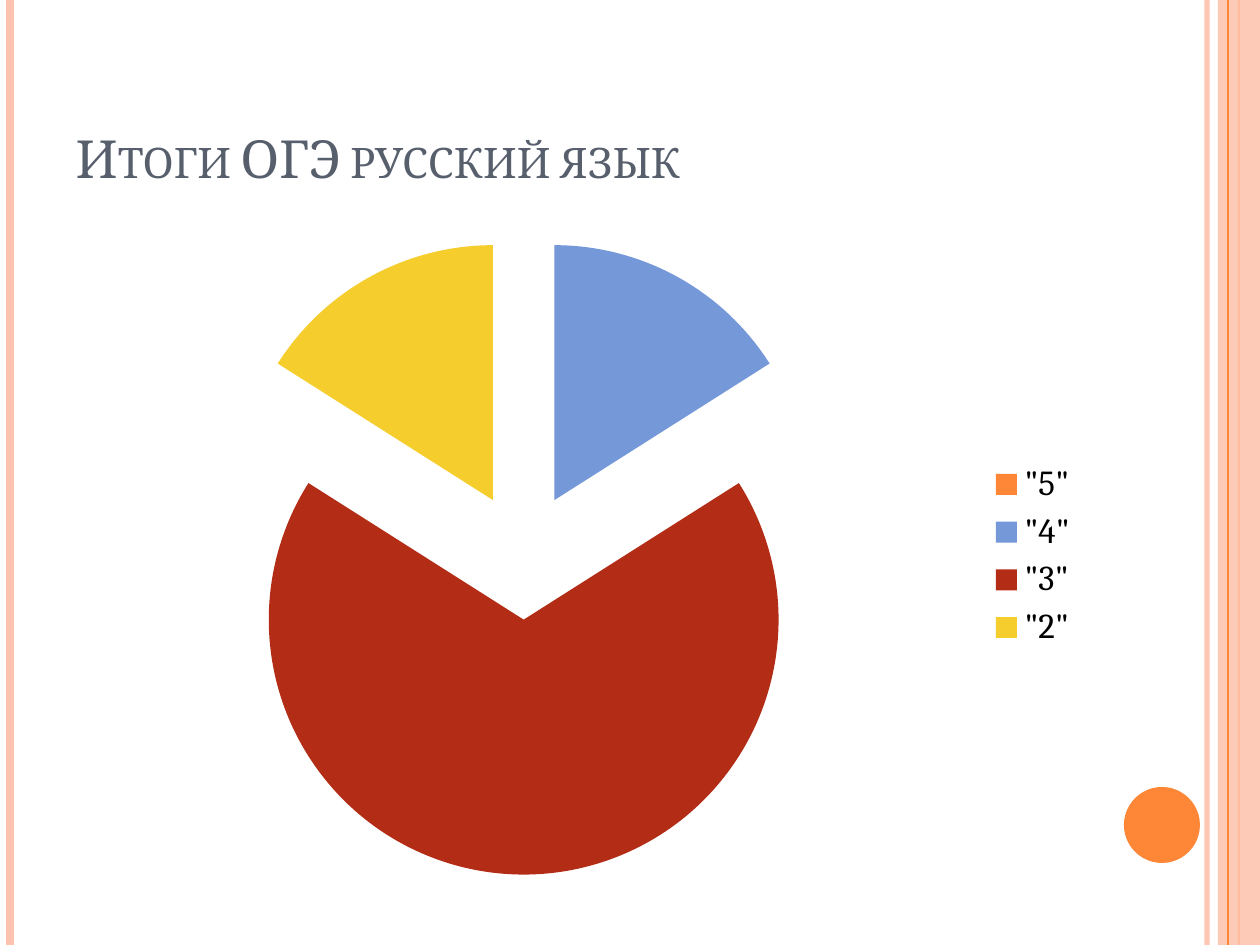
from dataclasses import dataclass

from lxml import etree
from pptx import Presentation
from pptx.chart.data import CategoryChartData
from pptx.dml.color import RGBColor
from pptx.enum.chart import XL_CHART_TYPE, XL_LEGEND_POSITION
from pptx.enum.shapes import MSO_CONNECTOR, MSO_SHAPE
from pptx.enum.text import MSO_ANCHOR, MSO_AUTO_SIZE, PP_ALIGN
from pptx.oxml.ns import qn
from pptx.util import Emu, Pt

PIE = XL_CHART_TYPE.PIE
LEGEND_RIGHT = XL_LEGEND_POSITION.RIGHT
STRAIGHT = MSO_CONNECTOR.STRAIGHT
RECTANGLE = MSO_SHAPE.RECTANGLE
OVAL = MSO_SHAPE.OVAL
BOTTOM = MSO_ANCHOR.BOTTOM
NO_FIT = MSO_AUTO_SIZE.NONE
LEFT = PP_ALIGN.LEFT

EMU_PER_PX = 914400 / 126
WIDTH, HEIGHT = 1260, 945
TITLE_ONLY = 5


@dataclass(frozen=True)
class Theme:
    font: str = "Cambria"
    title_size: int = 30
    legend_size: int = 20
    ink: str = "000000"
    title: str = "575F6D"
    peach: str = "FEC3AE"
    orange: str = "FE8637"
    blue: str = "7598D9"
    red: str = "B32C16"
    yellow: str = "F5CD2D"


def px(length):
    return Emu(round(length * EMU_PER_PX))


def color(value):
    return RGBColor.from_string(value)


def set_opacity(properties, percent):
    swatch = properties.find(".//" + qn("a:srgbClr"))
    etree.SubElement(swatch, qn("a:alpha"), val=str(percent * 1000))


class SlideBuilder:
    def __init__(self, slide, theme):
        self.slide = slide
        self.theme = theme

    def vertical_line(self, x, tint, weight, opacity=100):
        line = self.slide.shapes.add_connector(STRAIGHT, px(x), 0, px(x), px(HEIGHT))
        line.line.color.rgb = color(tint)
        line.line.width = Pt(weight)
        properties = line._element.spPr
        if opacity < 100:
            set_opacity(properties, opacity)
        etree.SubElement(properties, qn("a:effectLst"))

    def shape(self, kind, left, top, width, height, tint, opacity=100):
        shape = self.slide.shapes.add_shape(kind, px(left), px(top), px(width), px(height))
        shape.shadow.inherit = False
        shape.fill.solid()
        shape.fill.fore_color.rgb = color(tint)
        shape.line.fill.background()
        if opacity < 100:
            set_opacity(shape._element.spPr, opacity)

    def title(self, text, left, top, width, height):
        box = self.slide.shapes.title
        box.left, box.top, box.width, box.height = map(px, (left, top, width, height))
        frame = box.text_frame
        frame.text = text
        frame.word_wrap = True
        frame.auto_size = NO_FIT
        frame.vertical_anchor = BOTTOM
        para = frame.paragraphs[0]
        para.alignment = LEFT
        font = para.runs[0].font
        font.name = self.theme.font
        font.size = Pt(self.theme.title_size)
        font.color.rgb = color(self.theme.title)
        para.runs[0]._r.get_or_add_rPr().set("cap", "small")

    def pie(self, grades, explosion, left, top, width, height):
        data = CategoryChartData()
        data.categories = [grade for grade, share, tint in grades]
        data.add_series("Series 1", [share for grade, share, tint in grades])
        chart = self.slide.shapes.add_chart(
            PIE, px(left), px(top), px(width), px(height), data).chart
        chart.has_title = False
        chart.font.name = self.theme.font
        chart.font.size = Pt(10)
        chart.font.color.rgb = color(self.theme.ink)
        chart.has_legend = True
        chart.legend.position = LEGEND_RIGHT
        chart.legend.include_in_layout = False
        chart.legend.font.name = self.theme.font
        chart.legend.font.size = Pt(self.theme.legend_size)
        plot = chart.plots[0]
        plot.vary_by_categories = True
        series = plot.series[0]
        for index, (grade, share, tint) in enumerate(grades):
            fill = series.points[index].format.fill
            fill.solid()
            fill.fore_color.rgb = color(tint)
        spread = etree.Element(qn("c:explosion"), val=str(explosion))
        series._element.find(qn("c:dPt")).addprevious(spread)
        for point in series._element.findall(qn("c:dPt")):
            own_spread = etree.Element(qn("c:explosion"), val=str(explosion))
            point.find(qn("c:spPr")).addprevious(own_spread)


def main():
    deck = Presentation()
    deck.slide_width, deck.slide_height = px(WIDTH), px(HEIGHT)
    theme = Theme()
    page = SlideBuilder(deck.slides.add_slide(deck.slide_layouts[TITLE_ONLY]), theme)

    page.vertical_line(1207, theme.peach, 3, 93)
    page.vertical_line(10, theme.peach, 4.5)
    page.vertical_line(1239, theme.orange, 1.5)
    page.shape(RECTANGLE, 1218, 0, 42, HEIGHT, theme.peach, 87)
    page.vertical_line(1228, theme.orange, 0.75)
    page.shape(OVAL, 1124, 787, 76, 76, theme.orange)

    page.title("Итоги ОГЭ русский язык", 63, 38, 1029, 157)
    grades = [
        ('"5"', 0, theme.orange),
        ('"4"', 16, theme.blue),
        ('"3"', 68, theme.red),
        ('"2"', 16, theme.yellow),
    ]
    page.pie(grades, 25, 63, 220, 1029, 672)
    deck.save("out.pptx")


if __name__ == "__main__":
    main()
